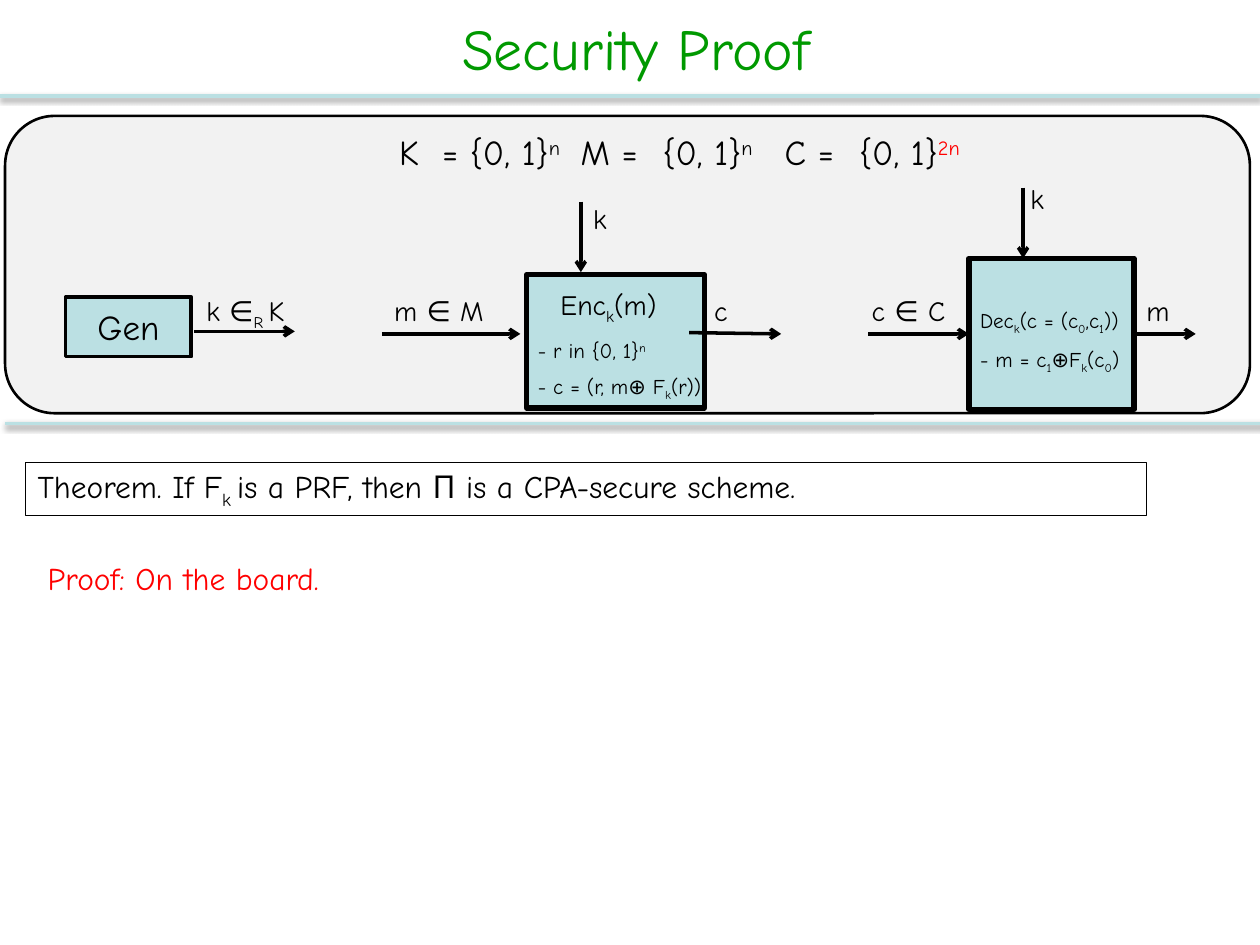
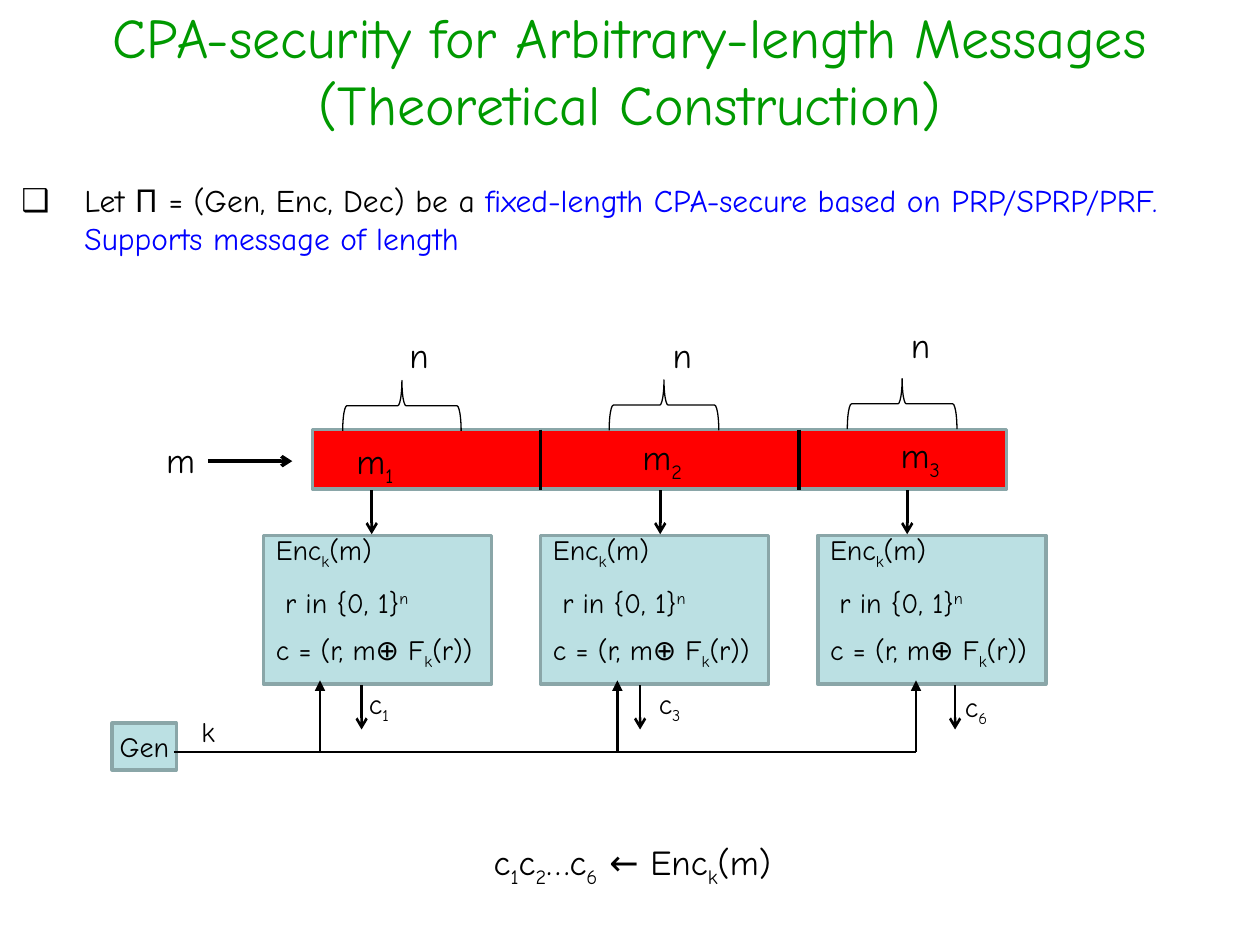
"""Builds two slides on CPA-secure encryption: the proof and the longer-message scheme."""
from lxml import etree
from pptx import Presentation, util as u
from pptx.dml.color import RGBColor
from pptx.enum import shapes as s, text as t
from pptx.oxml.ns import qn

SCALE = 9144
FONT = "Comic Neue"
HUE = {"ink": "000000", "title": "009900", "band": "BBE0E3", "edge": "8AA6A8",
       "panel": "F2F2F2", "red": "FF0000", "blue": "0000FF"}
RECT = s.MSO_SHAPE.RECTANGLE
LEFT, MID = t.PP_ALIGN.LEFT, t.PP_ALIGN.CENTER


def say(frame, marks, size, hue="ink", align=LEFT):
    """Write one paragraph per mark; | parts runs, _ lowers and ^ raises a run."""
    frame.word_wrap = True
    frame.auto_size = t.MSO_AUTO_SIZE.NONE
    for i, mark in enumerate(marks):
        para = frame.add_paragraph() if i else frame.paragraphs[0]
        para.alignment = align
        gap = etree.SubElement(para._p.get_or_add_pPr(), qn("a:spcBef"))
        etree.SubElement(gap, qn("a:spcPct"), val="50000" if align == LEFT else "0")
        for part in mark.split("|"):
            run = para.add_run()
            run.text = part.lstrip("_^")
            run.font.size = u.Pt(size)
            run.font.name = FONT
            run.font.color.rgb = RGBColor.from_string(HUE[hue])
            if part[0] in "_^":
                run.font._element.set("baseline", "-25000" if part[0] == "_" else "30000")


def link(page, ends, width, tip=None, hue="ink"):
    """Draw a straight line with an optional arrowhead at its end."""
    line = page.shapes.add_connector(s.MSO_CONNECTOR.STRAIGHT, *[n * SCALE for n in ends])
    line.line.width = u.Pt(width)
    line.line.color.rgb = RGBColor.from_string(HUE[hue])
    etree.SubElement(line._element.spPr, qn("a:effectLst"))
    if tip:
        etree.SubElement(line.line._ln, qn("a:tailEnd"), type=tip)
    return line


deck = Presentation()
deck.slide_width, deck.slide_height = 1000 * SCALE, 750 * SCALE
proof = deck.slides.add_slide(deck.slide_layouts[5])
long = deck.slides.add_slide(deck.slide_layouts[1])

for page, words, size, area in [
    (proof, "Security Proof", 33, (-35, 5, 1079, 71)),
    (long, "CPA-security for Arbitrary-length Messages (Theoretical Construction)", 32,
     (-4, -3, 1008, 94)),
]:
    head = page.shapes.title
    head.left, head.top, head.width, head.height = [n * SCALE for n in area]
    say(head.text_frame, [words], size, "title", MID)
    head.text_frame.vertical_anchor = t.MSO_ANCHOR.TOP

body = long.placeholders[1]
body.left, body.top, body.width, body.height = [n * SCALE for n in (7, 139, 993, 71)]
say(body.text_frame, ["Let Π = (Gen, Enc, Dec) be a |fixed-length CPA-secure based on "
                      "PRP/SPRP/PRF. Supports message of length"], 18)
para = body.text_frame.paragraphs[0]
para.runs[1].font.color.rgb = RGBColor.from_string(HUE["blue"])
props = para._p.get_or_add_pPr()
props.set("marL", str(50 * SCALE))
props.set("indent", str(-50 * SCALE))
etree.SubElement(props, qn("a:buChar"), char="❑")

for x, y in [(0, 76), (4, 336)]:
    band = link(proof, (x, y, x + 1000, y), 2, hue="band")
    glow = etree.SubElement(band._element.spPr.find(qn("a:effectLst")), qn("a:outerShdw"),
                            blurRad="40000", dist="20000", dir="5400000", rotWithShape="0")
    tint = etree.SubElement(glow, qn("a:srgbClr"), val=HUE["ink"])
    etree.SubElement(tint, qn("a:alpha"), val="38000")

cols = range(209, 651, 220)
boxes = [
    ("claim", proof, RECT, (20, 367, 890, 42), None, "ink", 0.75),
    ("panel", proof, s.MSO_SHAPE.ROUNDED_RECTANGLE, (4, 92, 988, 236), "panel", "ink", 1.5),
    ("gen", proof, RECT, (52, 236, 100, 47), "band", "ink", 2.25),
    ("enc", proof, RECT, (418, 218, 141, 106), "band", "ink", 3),
    ("dec", proof, RECT, (769, 205, 131, 120), "band", "ink", 3),
    ("block", long, RECT, (248, 341, 551, 47), "red", "edge", 2),
    ("key", long, RECT, (89, 574, 51, 37), "band", "edge", 2),
]
boxes += [(f"enc{x}", long, RECT, (x, 425, 181, 118), "band", "edge", 2) for x in cols]
boxes += [(f"brace{x}", long, s.MSO_SHAPE.RIGHT_BRACE, (x, y, 40, h), None, "ink", 0.75)
          for x, y, h in [(299, 275, 94), (507, 278, 87), (696, 277, 87)]]
made = {}
for name, page, kind, area, fill, edge, width in boxes:
    box = made[name] = page.shapes.add_shape(kind, *[n * SCALE for n in area])
    box.shadow.inherit = False
    if fill:
        box.fill.solid()
        box.fill.fore_color.rgb = RGBColor.from_string(HUE[fill])
    else:
        box.fill.background()
    box.line.color.rgb = RGBColor.from_string(HUE[edge])
    box.line.width = u.Pt(width)
    if name.startswith("brace"):
        box.rotation = 270

say(made["claim"].text_frame, ["Theorem. If F|_k |is a PRF, then Π is a CPA-secure scheme."], 18)
for name, size in [("gen", 20), ("key", 16)]:
    frame = made[name].text_frame
    frame.margin_left = frame.margin_right = 0
    say(frame, ["Gen"], size, align=MID)

for ends in [(154, 263, 234, 263), (303, 265, 413, 265), (461, 160, 461, 216),
             (547, 264, 620, 265), (812, 149, 812, 205)]:
    link(proof, ends, 2, "arrow")
link(proof, (689, 265, 769, 265), 2, "arrow").end_connect(made["dec"], 1)
link(proof, (900, 265, 949, 265), 2, "arrow").begin_connect(made["dec"], 3)

for x in (429, 634):
    link(long, (x, 341, x, 389), 2)
link(long, (165, 366, 232, 366), 2, "arrow")
link(long, (138, 597, 727, 597), 1.5)
for x in (295, 524, 720):
    link(long, (x, 389, x, 424), 1.5, "arrow")
for x in (287, 508, 758):
    link(long, (x, 544, x, 579), 1.5, "arrow")
for x in (254, 490, 727):
    link(long, (x, 597, x, 540), 1.5, "triangle")

notes = [
    (proof, (297, 99, 520, 44), 20,
     ["K\t= {0, 1}|^n|\tM =\t{0, 1}|^n|\tC =\t{0, 1}|^2n"]),
    (proof, (154, 228, 134, 37), 16, ["k ∈|_R |K"]),
    (proof, (303, 228, 118, 37), 16, ["m ∈ M"]),
    (proof, (461, 155, 83, 37), 16, ["k"]),
    (proof, (557, 228, 60, 37), 16, ["c"]),
    (proof, (435, 223, 130, 37), 16, ["Enc|_k|(m)"]),
    (proof, (417, 263, 156, 60), 12, ["- r in {0, 1}|^n", "- c = (r, m⊕ F|_k|(r))"]),
    (proof, (808, 139, 83, 37), 16, ["k"]),
    (proof, (768, 239, 180, 67), 12,
     ["Dec|_k|(c = (c|_0|,c|_1|))", "- m = c|_1|⊕F|_k|(c|_0|)"]),
    (proof, (682, 228, 83, 37), 16, ["c ∈ C"]),
    (proof, (900, 228, 71, 37), 16, ["m"]),
    (proof, (28, 439, 299, 42), 18, ["Proof: On the board."]),
    (long, (150, 562, 42, 37), 16, ["k"]),
    (long, (122, 343, 59, 44), 20, ["m"]),
    (long, (382, 662, 291, 44), 20, ["c|_1|c|_2|…c|_6| ← Enc|_k|(m)"]),
]
notes += [(long, (x, y, 59, 44), 20, [f"m|_{i}"])
          for i, x, y in [(1, 273, 344), (2, 500, 341), (3, 705, 339)]]
notes += [(long, (x, y, 59, 44), 20, ["n"]) for x, y in [(315, 260), (524, 260), (713, 252)]]
notes += [(long, (x, y, 42, 37), 16, [f"c|_{i}"])
          for i, x, y in [(1, 283, 540), (3, 513, 540), (6, 756, 542)]]
notes += [(long, (x, 418, 205, 118), 16,
           ["Enc|_k|(m)", " r in {0, 1}|^n", "c = (r, m⊕ F|_k|(r))"]) for x in cols]
for page, area, size, marks in notes:
    note = page.shapes.add_textbox(*[n * SCALE for n in area])
    say(note.text_frame, marks, size, "red" if marks[0].startswith("Proof") else "ink")
    if "\t" in marks[0]:
        para = note.text_frame.paragraphs[0]
        para.runs[-1].font.color.rgb = RGBColor.from_string(HUE["red"])
        tabs = etree.SubElement(para._p.get_or_add_pPr(), qn("a:tabLst"))
        for stop in (34, 144, 209, 306, 365):
            etree.SubElement(tabs, qn("a:tab"), pos=str(stop * SCALE), algn="l")
        note.left += 10 * SCALE

deck.save("out.pptx")
